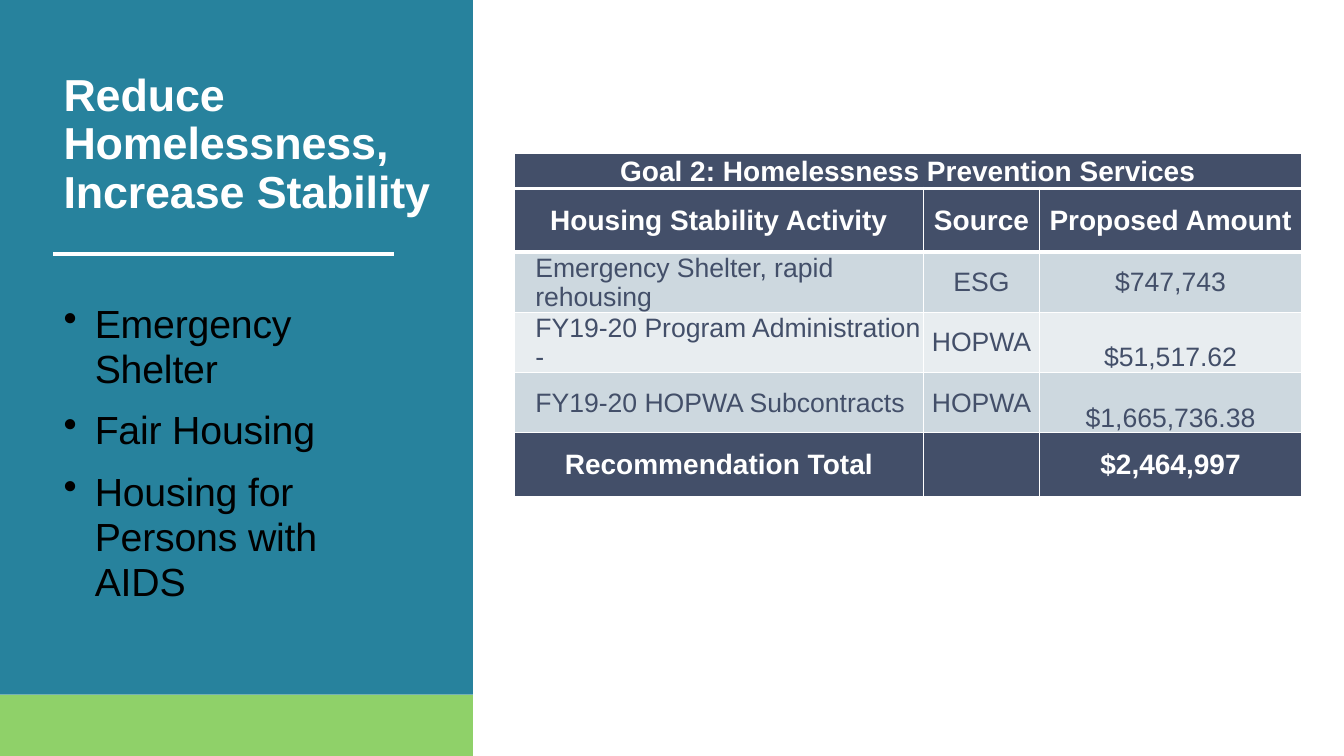
import pptx
import pptx.util
import pptx.dml.color
import pptx.enum.shapes
import pptx.enum.text
import lxml.etree

Inch, Pt = pptx.util.Inches, pptx.util.Pt
Align, Anchor = pptx.enum.text.PP_ALIGN, pptx.enum.text.MSO_ANCHOR
TEAL, GREEN, NAVY, WHITE, BLACK = "27829D", "8FD169", "434F69", "FFFFFF", "000000"
BANDS = ["CDD8DF", "E8EDF0"]
WIDE, HIGH = 13.33, 7.5

TITLE = "Reduce Homelessness, Increase Stability"
POINTS = ["Emergency Shelter", "Fair Housing", "Housing for Persons with AIDS"]
ROWS = [
    ["Goal 2: Homelessness Prevention Services", "", ""],
    ["Housing Stability Activity", "Source", "Proposed Amount"],
    ["Emergency Shelter, rapid rehousing", "ESG", "$747,743"],
    ["FY19-20 Program Administration -", "HOPWA", "$51,517.62"],
    ["FY19-20 HOPWA Subcontracts", "HOPWA", "$1,665,736.38"],
    ["Recommendation Total", "", "$2,464,997"],
]
COLS = [4.06, 1.15, 2.6]
TALL = [0.35, 0.63, 0.58, 0.58, 0.6, 0.63]


def color(code):
    return pptx.dml.color.RGBColor.from_string(code)


def paint(part, code):
    part.fill.solid()
    part.fill.fore_color.rgb = color(code)


def node(home, tag, **attrs):
    return lxml.etree.SubElement(home, pptx.oxml.ns.qn(tag), attrs)


def style(para, size, code, bold=False):
    para.font.name, para.font.size, para.font.bold = "Arial", Pt(size), bold
    para.font.color.rgb = color(code)


def tighten(para):
    for run in para.runs:
        run._r.get_or_add_rPr().set("spc", "-10")


def set_frame(frame, top):
    frame.word_wrap = True
    frame.vertical_anchor = Anchor.TOP
    frame.margin_left = frame.margin_right = frame.margin_bottom = 0
    frame.margin_top = Inch(top)


def add_block(slide, x, y, w, h, code):
    block = slide.shapes.add_shape(
        pptx.enum.shapes.MSO_SHAPE.RECTANGLE, Inch(x), Inch(y), Inch(w), Inch(h))
    block.shadow.inherit = False
    block.line.fill.background()
    paint(block, code)


def add_rule(slide, x, y, w):
    rule = slide.shapes.add_connector(
        pptx.enum.shapes.MSO_CONNECTOR.STRAIGHT, Inch(x), Inch(y), Inch(x + w), Inch(y))
    rule.line.color.rgb = color(WHITE)
    rule.line.width = Pt(2.58)
    node(rule._element.spPr, "a:effectLst")


def set_title(slide, x, y, w, h):
    title = slide.shapes.title
    title.left, title.top, title.width, title.height = map(Inch, (x, y, w, h))
    frame = title.text_frame
    frame.text = TITLE
    set_frame(frame, 0.07)
    frame.auto_size = pptx.enum.text.MSO_AUTO_SIZE.NONE
    para = frame.paragraphs[0]
    para.alignment = Align.LEFT
    para.line_spacing, para.space_before = Pt(34.7), Pt(5.2)
    style(para, 32, WHITE, True)
    tighten(para)


def add_points(slide, x, y, w, h):
    frame = slide.shapes.add_textbox(Inch(x), Inch(y), Inch(w), Inch(h)).text_frame
    set_frame(frame, 0.12)
    frame.text = "\n".join(POINTS)
    for para in frame.paragraphs:
        para.line_spacing = Pt(32)
        para.space_before = para.space_after = Pt(6)
        style(para, 28, BLACK)
        tighten(para)
        # Hanging bullet, placed ahead of the default run properties
        props = para._p.get_or_add_pPr()
        props.set("marL", str(Inch(0.31)))
        props.set("indent", str(-Inch(0.31)))
        bullet = node(props, "a:buChar", char="•")
        props.find(pptx.oxml.ns.qn("a:defRPr")).addprevious(bullet)


def add_panel(slide, x, y, w, h):
    """Left panel: teal and green blocks, title, rule and bullets."""
    split = 0.919 * h
    add_block(slide, x, y, w, split, TEAL)
    add_block(slide, x, y + split, w, h - split, GREEN)
    set_title(slide, x + 0.63, y + 0.64, 3.69, 1.55)
    add_rule(slide, x + 0.53, y + 2.52, 3.38)
    add_points(slide, x + 0.63, y + 2.87, 3.38, 3.15)


def set_edges(cell, top, bottom):
    props = cell._tc.get_or_add_tcPr()
    for tag, width in (("L", 1), ("R", 1), ("T", top), ("B", bottom)):
        edge = node(props, "a:ln" + tag, w=str(Pt(width)))
        node(node(edge, "a:solidFill"), "a:srgbClr", val=WHITE)


def set_cell(cell, text, r, c):
    body = 2 <= r < len(ROWS) - 1
    cell.margin_left = cell.margin_top = cell.margin_right = Inch(0.01)
    cell.margin_bottom = 0
    # Amounts in the later body rows sit on the bottom edge
    low = body and r > 2 and c == 2
    cell.vertical_anchor = Anchor.BOTTOM if low else Anchor.MIDDLE
    set_edges(cell, 3 if r in (1, 2) else 1, 3 if r in (0, 1) else 1)
    paint(cell, BANDS[r % 2] if body else NAVY)
    cell.text = text
    para = cell.text_frame.paragraphs[0]
    style(para, 19 if body else 20, NAVY if body else WHITE, not body)
    if body and c == 0:
        para.alignment = Align.LEFT
        para._p.get_or_add_pPr().set("marL", str(Inch(0.2)))
    else:
        para.alignment = Align.CENTER


def add_budget(slide, x, y):
    """Right side: funding table."""
    table = slide.shapes.add_table(
        len(ROWS), len(COLS), Inch(x), Inch(y), Inch(sum(COLS)), Inch(sum(TALL))).table
    table.first_row = table.horz_banding = False
    for col, width in zip(table.columns, COLS):
        col.width = Inch(width)
    for r, (row, height) in enumerate(zip(ROWS, TALL)):
        table.rows[r].height = Inch(height)
        for c, text in enumerate(row):
            set_cell(table.cell(r, c), text, r, c)
    table.cell(0, 0).merge(table.cell(0, len(COLS) - 1))


def main():
    deck = pptx.Presentation()
    deck.slide_width, deck.slide_height = Inch(WIDE), Inch(HIGH)
    slide = deck.slides.add_slide(deck.slide_layouts[5])
    add_panel(slide, 0, 0, 4.69, HIGH)
    # Bring the title in front of the panel blocks
    slide.shapes._spTree.append(slide.shapes.title._element)
    add_budget(slide, 5.1, 1.52)
    deck.save("out.pptx")


if __name__ == "__main__":
    main()
